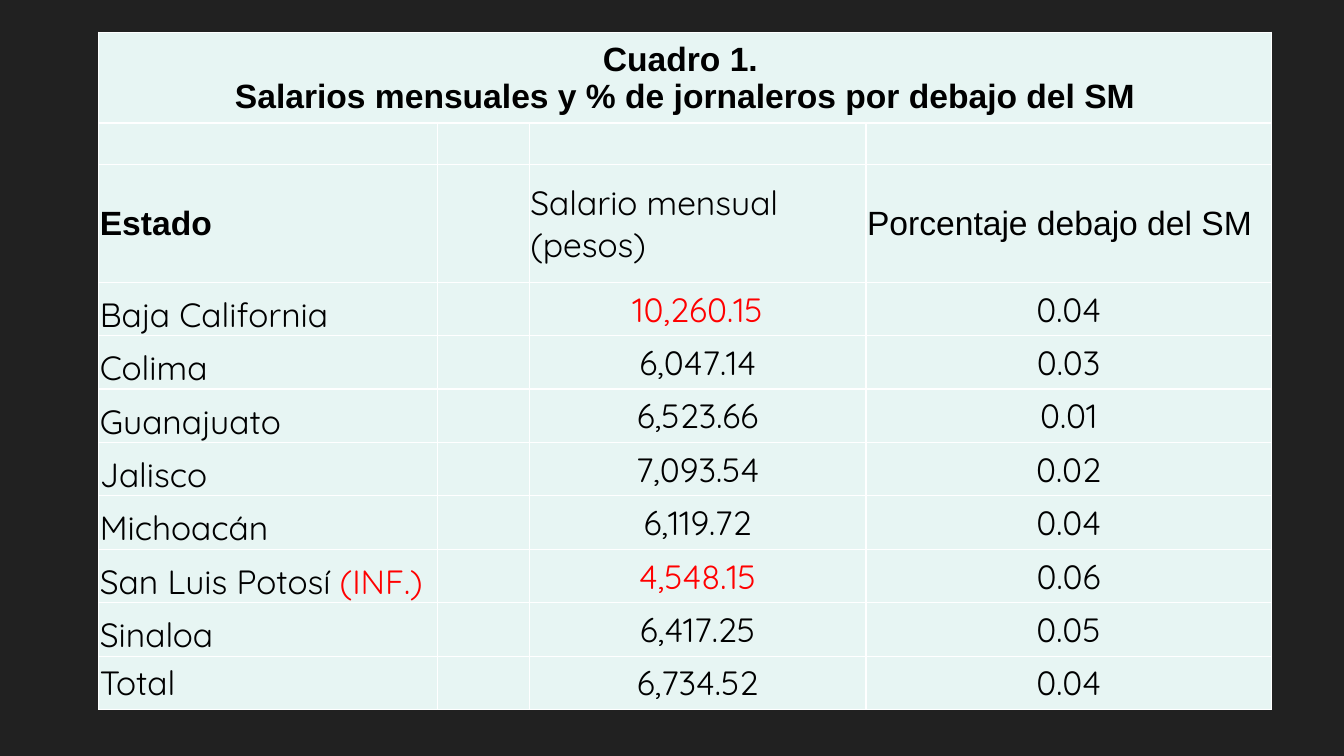
from dataclasses import dataclass

from lxml import etree
from pptx import Presentation
from pptx.dml.color import RGBColor
from pptx.enum.text import MSO_ANCHOR, PP_ALIGN
from pptx.oxml.ns import qn
from pptx.util import Inches, Pt

LEFT, CENTER = PP_ALIGN.LEFT, PP_ALIGN.CENTER
MIDDLE, BOTTOM = MSO_ANCHOR.MIDDLE, MSO_ANCHOR.BOTTOM


@dataclass(frozen=True)
class Theme:
    background: RGBColor = RGBColor(0x21, 0x21, 0x21)
    cell: RGBColor = RGBColor(0xE7, 0xF5, 0xF3)
    text: RGBColor = RGBColor(0, 0, 0)
    highlight: RGBColor = RGBColor(0xFF, 0, 0)
    border: str = "FFFFFF"
    border_width: int = Pt(1)
    size: int = Pt(24)
    heading_font: str = "Arial"
    body_font: str = "Quicksand"


THEME = Theme()
TITLE = "Cuadro 1. \nSalarios mensuales y % de jornaleros por debajo del SM"
COLUMN_WIDTHS = [3.36, 0.91, 3.34, 4.02]
HEADER_HEIGHTS = [0.9, 0.41, 1.17]
STATE_HEIGHT = 0.53
STATES = [
    ("Baja California", "10,260.15", "0.04"),
    ("Colima", "6,047.14", "0.03"),
    ("Guanajuato", "6,523.66", "0.01"),
    ("Jalisco", "7,093.54", "0.02"),
    ("Michoacán", "6,119.72", "0.04"),
    ("San Luis Potosí ", "4,548.15", "0.06"),
    ("Sinaloa", "6,417.25", "0.05"),
    ("Total", "6,734.52", "0.04"),
]
HIGHLIGHTED_WAGES = {"10,260.15", "4,548.15"}


def style_cell(cell):
    properties = cell._tc.get_or_add_tcPr()
    for side in ("a:lnL", "a:lnR", "a:lnT", "a:lnB"):
        line = etree.SubElement(properties, qn(side), w=str(THEME.border_width))
        fill = etree.SubElement(line, qn("a:solidFill"))
        etree.SubElement(fill, qn("a:srgbClr"), val=THEME.border)
    cell.fill.solid()
    cell.fill.fore_color.rgb = THEME.cell
    cell.margin_left = cell.margin_right = cell.margin_top = Inches(0.01)
    cell.margin_bottom = 0


def write_cell(cell, text, font=THEME.body_font, bold=False, color=THEME.text,
               alignment=LEFT, anchor=MIDDLE):
    cell.vertical_anchor = anchor
    paragraph = cell.text_frame.paragraphs[0]
    paragraph.text = text
    paragraph.alignment = alignment
    paragraph.font.name = font
    paragraph.font.size = THEME.size
    paragraph.font.bold = bold
    paragraph.font.color.rgb = color
    return paragraph


def fill_headings(table):
    table.cell(0, 0).merge(table.cell(0, len(COLUMN_WIDTHS) - 1))
    write_cell(table.cell(0, 0), TITLE, THEME.heading_font, True, alignment=CENTER)
    write_cell(table.cell(2, 0), "Estado", THEME.heading_font, True)
    write_cell(table.cell(2, 2), "Salario mensual (pesos)")
    write_cell(table.cell(2, 3), "Porcentaje debajo del SM", THEME.heading_font)


def fill_states(table):
    for row, (state, wage, share) in enumerate(STATES, len(HEADER_HEIGHTS)):
        anchor = MIDDLE if state == "Total" else BOTTOM
        paragraph = write_cell(table.cell(row, 0), state, anchor=anchor)
        if state.startswith("San Luis"):
            note = paragraph.add_run()
            note.text = "(INF.)"
            note.font.color.rgb = THEME.highlight
        color = THEME.highlight if wage in HIGHLIGHTED_WAGES else THEME.text
        write_cell(table.cell(row, 2), wage, color=color, alignment=CENTER)
        write_cell(table.cell(row, 3), share, alignment=CENTER)


def add_wage_table(slide, left, top):
    heights = HEADER_HEIGHTS + [STATE_HEIGHT] * len(STATES)
    table = slide.shapes.add_table(
        len(heights), len(COLUMN_WIDTHS), Inches(left), Inches(top),
        Inches(sum(COLUMN_WIDTHS)), Inches(sum(heights))).table
    table.first_row = table.horz_banding = False
    for column, width in zip(table.columns, COLUMN_WIDTHS):
        column.width = Inches(width)
    for row, height in zip(table.rows, heights):
        row.height = Inches(height)
    for cell in table.iter_cells():
        style_cell(cell)
    fill_headings(table)
    fill_states(table)


def main():
    presentation = Presentation()
    presentation.slide_width = Inches(13.33)
    presentation.slide_height = Inches(7.5)
    slide = presentation.slides.add_slide(presentation.slide_layouts[6])
    slide.background.fill.solid()
    slide.background.fill.fore_color.rgb = THEME.background
    add_wage_table(slide, 0.98, 0.32)
    presentation.save("out.pptx")


if __name__ == "__main__":
    main()
